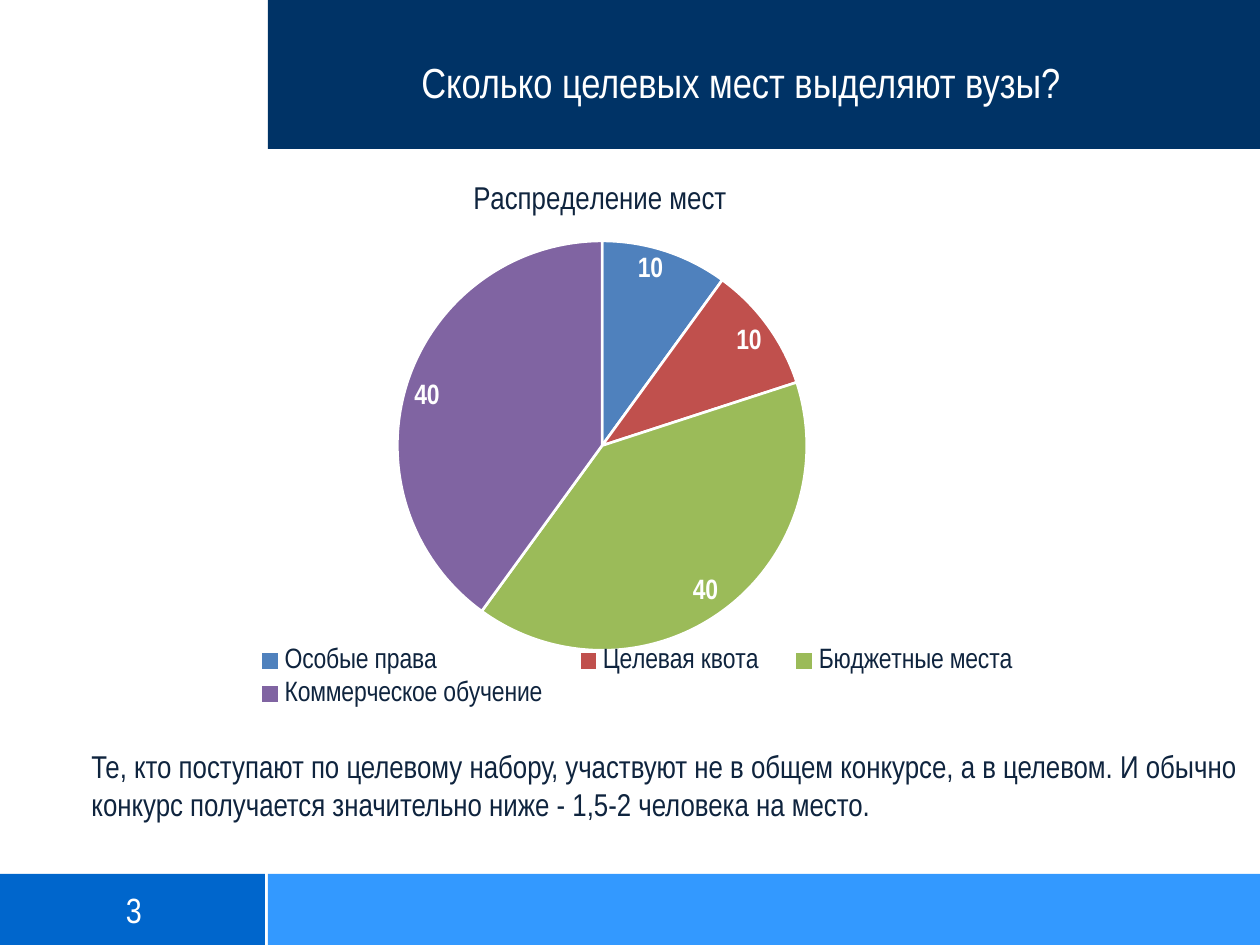
from lxml import etree
from pptx import Presentation
from pptx.chart.data import CategoryChartData
from pptx.dml.color import RGBColor
from pptx.enum.chart import XL_CHART_TYPE as Kind, XL_LABEL_POSITION as Spot
from pptx.enum.chart import XL_LEGEND_POSITION as Side
from pptx.enum.shapes import MSO_SHAPE as Form
from pptx.enum.text import MSO_ANCHOR as Anchor, PP_ALIGN as Align
from pptx.oxml.ns import qn
from pptx.util import Emu, Pt

PX = 914400 // 126
FONT = "Arial Narrow"
NAVY = RGBColor(0x00, 0x33, 0x66)
BLUE = RGBColor(0x00, 0x66, 0xCC)
SKY = RGBColor(0x33, 0x99, 0xFF)
INK = RGBColor(0x0F, 0x24, 0x3E)
WHITE = RGBColor(0xFF, 0xFF, 0xFF)

deck = Presentation()
deck.slide_width, deck.slide_height = Emu(1260 * PX), Emu(945 * PX)
slide = deck.slides.add_slide(deck.slide_layouts[6])


def place(host, after, **parts):
    """Give a chart part a manual layout, in fractions of the chart."""
    for old in host.findall(qn("c:layout")):
        host.remove(old)
    layout = etree.Element(qn("c:layout"))
    manual = etree.SubElement(layout, qn("c:manualLayout"))
    for name, value in parts.items():
        etree.SubElement(manual, qn(f"c:{name}")).set("val", str(value))
    if after is None:
        host.insert(0, layout)
    else:
        host.find(qn(after)).addnext(layout)


# Header and footer bands
for box, color in [
    ((268, 0, 992, 149), NAVY),
    ((268, 874, 992, 74), SKY),
    ((-3, 874, 268, 74), BLUE),
]:
    band = slide.shapes.add_shape(Form.RECTANGLE, *[Emu(n * PX) for n in box])
    band.shadow.inherit = False
    band.fill.solid()
    band.fill.fore_color.rgb = color
    band.line.fill.background()

# Page number, note and heading
note = ("Те, кто поступают по целевому набору, участвуют не в общем конкурсе, "
        "а в целевом. И обычно конкурс получается значительно ниже - "
        "1,5-2 человека на место.")
for text, box, size, color, align, anchor in [
    ("3", (0, 874, 268, 71), 20, WHITE, Align.CENTER, Anchor.MIDDLE),
    (note, (79, 741, 1181, 89), 18, INK, Align.LEFT, Anchor.TOP),
    ("Сколько целевых мест выделяют вузы?", (292, 50, 898, 63), 24, WHITE,
     Align.CENTER, Anchor.TOP),
]:
    frame = slide.shapes.add_textbox(*[Emu(n * PX) for n in box]).text_frame
    frame.word_wrap = True
    frame.vertical_anchor = anchor
    para = frame.paragraphs[0]
    para.text = text
    para.alignment = align
    para.font.name, para.font.size = FONT, Pt(size)
    para.font.color.rgb = color

# Pie of places
seats = [
    ("Особые права", 10, RGBColor(0x4F, 0x81, 0xBD)),
    ("Целевая квота", 10, RGBColor(0xC0, 0x50, 0x4D)),
    ("Бюджетные места", 40, RGBColor(0x9B, 0xBB, 0x59)),
    ("Коммерческое обучение", 40, RGBColor(0x80, 0x64, 0xA2)),
]
data = CategoryChartData()
data.categories = [name for name, _, _ in seats]
data.add_series("Series 1", [count for _, count, _ in seats])
box = [Emu(n * PX) for n in (23, 155, 1170, 559)]
chart = slide.shapes.add_chart(Kind.PIE, *box, data).chart
chart.font.name, chart.font.size = "Calibri", Pt(10)
chart.font.color.rgb = INK

chart.has_title = True
head = chart.chart_title.text_frame.paragraphs[0]
head.text = "Распределение мест"
head.font.name, head.font.size, head.font.bold = FONT, Pt(18), False
head.font.color.rgb = INK

chart.has_legend = True
legend = chart.legend
legend.position = Side.BOTTOM
legend.include_in_layout = False
legend.font.name, legend.font.size = FONT, Pt(16)
legend.font.color.rgb = INK

plot = chart.plots[0]
plot.vary_by_categories = True
for i, (_, _, color) in enumerate(seats):
    wedge = plot.series[0].points[i].format
    wedge.fill.solid()
    wedge.fill.fore_color.rgb = color
    wedge.line.color.rgb = WHITE
    wedge.line.width = Pt(1.5)
plot.has_data_labels = True
labels = plot.data_labels
labels.show_value = True
labels.position = Spot.INSIDE_END
labels.font.name, labels.font.size, labels.font.bold = FONT, Pt(16), True
labels.font.color.rgb = WHITE

root = chart.element.find(qn("c:chart"))
place(root.find(qn("c:title")), "c:tx", xMode="edge", yMode="edge",
      x=0.38, y=0.04)
place(root.find(qn("c:plotArea")), None, layoutTarget="inner", xMode="edge",
      yMode="edge", x=0.32, y=0.15, w=0.35, h=0.74)
place(root.find(qn("c:legend")), "c:legendPos", xMode="edge", yMode="edge",
      x=0.18, y=0.87, w=0.69, h=0.13)

deck.save("out.pptx")
